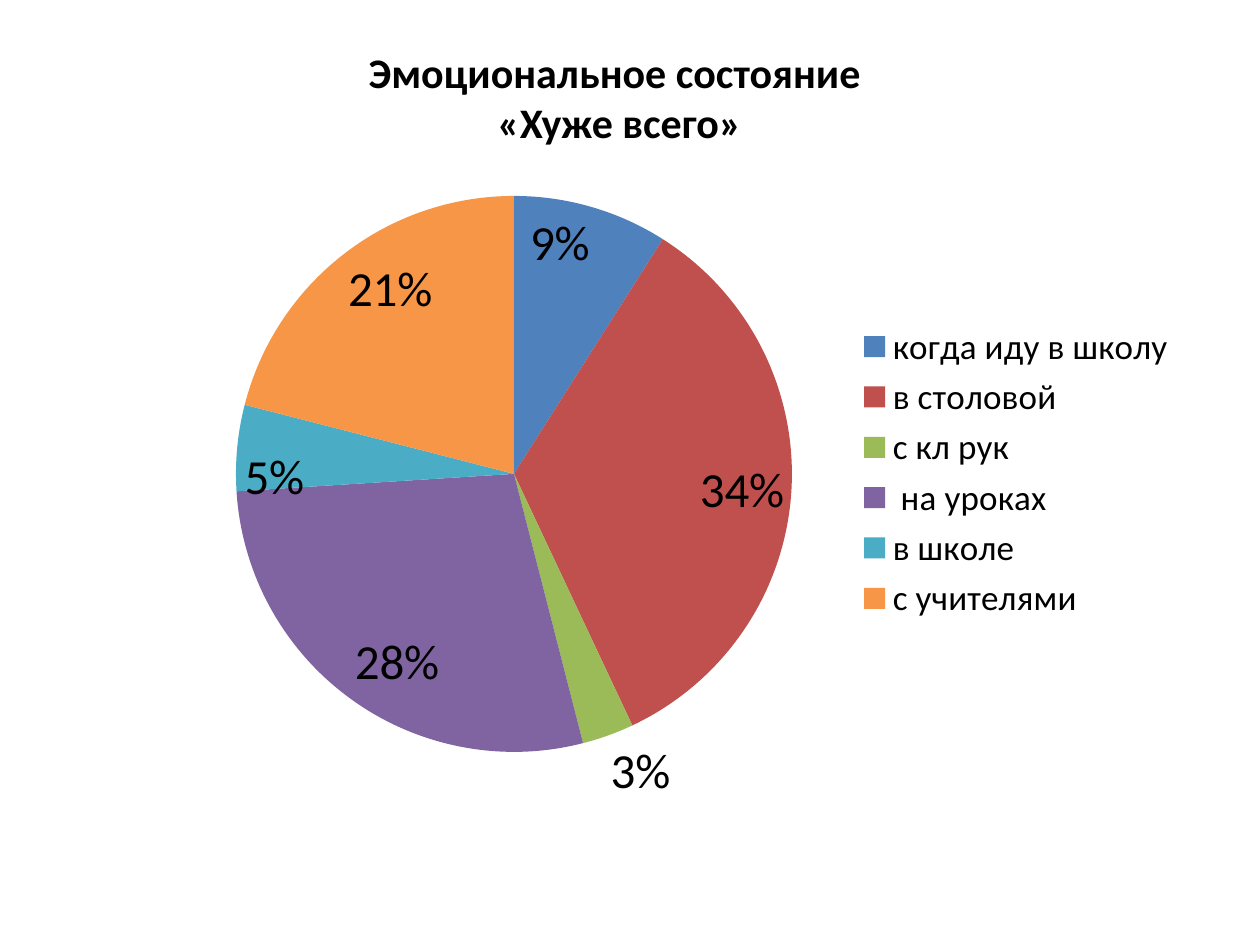
from dataclasses import dataclass

from lxml.etree import SubElement
from pptx import Presentation
from pptx.chart.chart import Chart
from pptx.chart.data import CategoryChartData
from pptx.dml.color import RGBColor
from pptx.enum.chart import XL_CHART_TYPE, XL_LABEL_POSITION, XL_LEGEND_POSITION
from pptx.enum.text import MSO_ANCHOR, PP_ALIGN
from pptx.oxml.ns import qn
from pptx.slide import Slide
from pptx.text.text import Font
from pptx.util import Emu, Pt

PX_PER_INCH = 126
FONT_NAME = "Calibri"
BLACK = RGBColor(0x00, 0x00, 0x00)
BLUE = RGBColor(0x4F, 0x81, 0xBD)
RED = RGBColor(0xC0, 0x50, 0x4D)
GREEN = RGBColor(0x9B, 0xBB, 0x59)
PURPLE = RGBColor(0x80, 0x64, 0xA2)
TEAL = RGBColor(0x4B, 0xAC, 0xC6)
ORANGE = RGBColor(0xF7, 0x96, 0x46)


@dataclass(frozen=True)
class Frame:
    """A rectangle in px."""

    left: int
    top: int
    width: int
    height: int

    def emu(self) -> list[Emu]:
        """Return the four lengths in EMU."""
        lengths = (self.left, self.top, self.width, self.height)
        return [Emu(round(length * 914400 / PX_PER_INCH)) for length in lengths]


@dataclass(frozen=True)
class Slice:
    """One answer, its share and its colour."""

    answer: str
    share: float
    color: RGBColor
    label_outside: bool = False


TITLE_LINES = ("Эмоциональное состояние ", "«Хуже всего»")
TITLE_FRAME = Frame(137, 39, 965, 115)
CHART_FRAME = Frame(108, 118, 1082, 709)
PIE_FRAME = Frame(236, 196, 556, 556)
SLICES = (
    Slice("когда иду в школу", 0.09, BLUE),
    Slice("в столовой", 0.34, RED),
    Slice("с кл рук", 0.03, GREEN, label_outside=True),
    Slice(" на уроках", 0.28, PURPLE),
    Slice("в школе", 0.05, TEAL),
    Slice("с учителями", 0.21, ORANGE),
)


def style_font(font: Font, size: int, bold: bool = False) -> None:
    """Set the typeface, size, weight and colour of a font."""
    font.name = FONT_NAME
    font.size = Pt(size)
    font.bold = bold
    font.color.rgb = BLACK


def write_title(page: Slide) -> None:
    """Place the title and write its lines."""
    title = page.shapes.title
    title.left, title.top, title.width, title.height = TITLE_FRAME.emu()
    box = title.text_frame
    box.word_wrap = True
    box.vertical_anchor = MSO_ANCHOR.MIDDLE
    for index, line in enumerate(TITLE_LINES):
        para = box.add_paragraph() if index else box.paragraphs[0]
        para.alignment = PP_ALIGN.CENTER
        span = para.add_run()
        span.text = line
        style_font(span.font, 24, bold=True)


def place_pie(chart: Chart) -> None:
    """Fix the pie's area as fractions of the chart frame."""
    plot_area = chart.plots[0]._element.getparent()
    layout = plot_area.find(qn("c:layout"))
    if layout is None:
        layout = SubElement(plot_area, qn("c:layout"))
        plot_area.insert(0, layout)
    manual = SubElement(layout, qn("c:manualLayout"))
    settings = {
        "layoutTarget": "inner",
        "xMode": "edge",
        "yMode": "edge",
        "x": (PIE_FRAME.left - CHART_FRAME.left) / CHART_FRAME.width,
        "y": (PIE_FRAME.top - CHART_FRAME.top) / CHART_FRAME.height,
        "w": PIE_FRAME.width / CHART_FRAME.width,
        "h": PIE_FRAME.height / CHART_FRAME.height,
    }
    for name, value in settings.items():
        SubElement(manual, qn(f"c:{name}")).set("val", str(value))


def draw_pie(page: Slide) -> None:
    """Add the pie chart with its legend and labels."""
    data = CategoryChartData(number_format="0%")
    data.categories = [part.answer for part in SLICES]
    data.add_series("Series 1", [part.share for part in SLICES])
    chart = page.shapes.add_chart(XL_CHART_TYPE.PIE, *CHART_FRAME.emu(), data).chart
    style_font(chart.font, 18)
    chart.has_title = False
    chart.has_legend = True
    chart.legend.position = XL_LEGEND_POSITION.RIGHT
    chart.legend.include_in_layout = False
    style_font(chart.legend.font, 20)
    place_pie(chart)

    plot = chart.plots[0]
    plot.vary_by_categories = True
    series = plot.series[0]
    labels = series.data_labels
    labels.show_value = True
    labels.number_format = "0%"
    labels.number_format_is_linked = False
    labels.position = XL_LABEL_POSITION.INSIDE_END
    style_font(labels.font, 28)
    for index, part in enumerate(SLICES):
        point = series.points[index]
        point.format.fill.solid()
        point.format.fill.fore_color.rgb = part.color
        if part.label_outside:
            style_font(point.data_label.font, 28)
            point.data_label.position = XL_LABEL_POSITION.OUTSIDE_END


def main() -> None:
    """Build the slide and save it."""
    deck = Presentation()
    deck.slide_width, deck.slide_height = Frame(0, 0, 1260, 945).emu()[2:]
    page = deck.slides.add_slide(deck.slide_layouts[5])
    write_title(page)
    draw_pie(page)
    deck.save("out.pptx")


if __name__ == "__main__":
    main()
